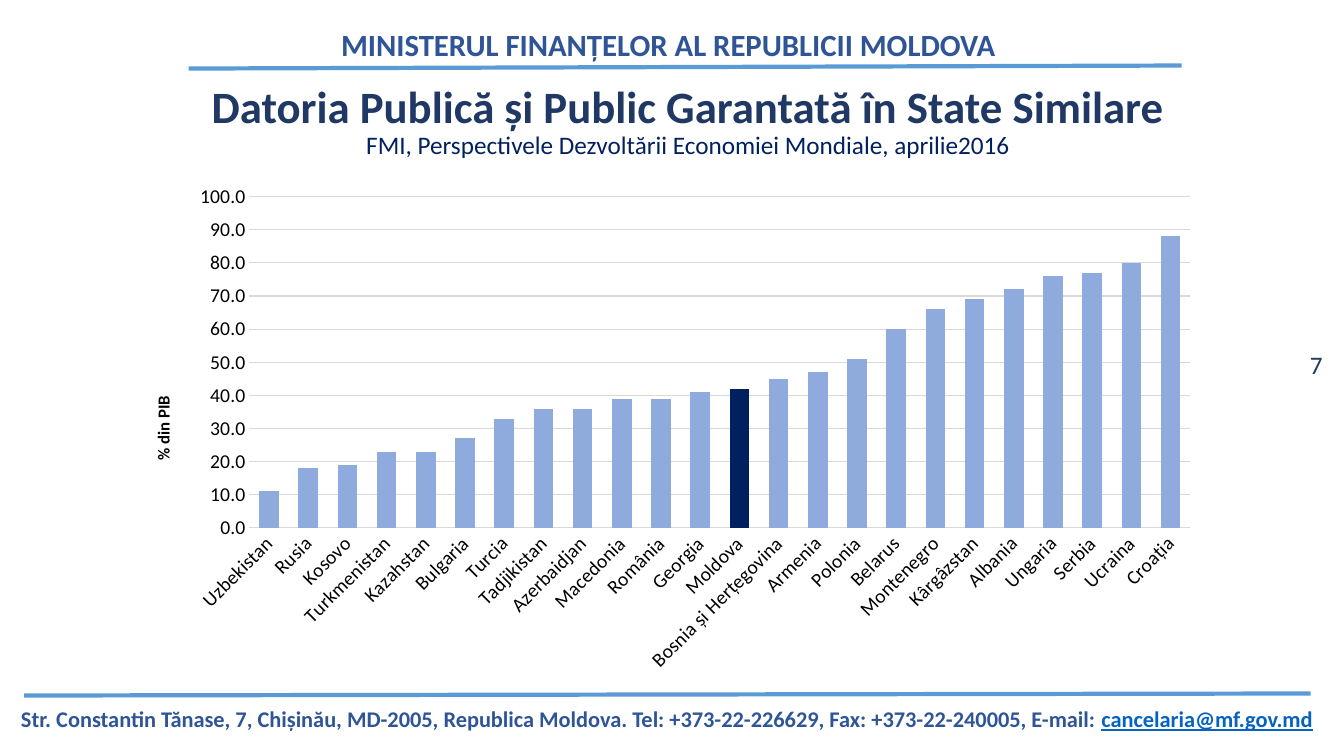
from lxml import etree
from pptx import Presentation
from pptx.chart.data import CategoryChartData
from pptx.dml.color import RGBColor
from pptx.enum.chart import XL_CHART_TYPE as ChartType, XL_TICK_MARK as TickMark
from pptx.enum.shapes import MSO_CONNECTOR as Connector
from pptx.enum.text import MSO_ANCHOR as Anchor, PP_ALIGN as Align
from pptx.oxml.ns import qn
from pptx.util import Inches, Pt

FONT = "Calibri"
NAVY, DARK_BLUE, MID_BLUE = "002060", "203864", "2F5597"
RULE_BLUE, BAR_BLUE, LINK_BLUE = "5B9BD5", "8FAADC", "0563C1"
GRID_GREY, BLACK = "D9D9D9", "000000"
HIGHLIGHTED = "Moldova"
DEBT = {
    "Uzbekistan": 11, "Rusia": 18, "Kosovo": 19, "Turkmenistan": 23,
    "Kazahstan": 23, "Bulgaria": 27, "Turcia": 33, "Tadjikistan": 36,
    "Azerbaidjan": 36, "Macedonia": 39, "România": 39, "Georgia": 41,
    "Moldova": 42, "Bosnia și Herțegovina": 45, "Armenia": 47, "Polonia": 51,
    "Belarus": 60, "Montenegro": 66, "Kârgâzstan": 69, "Albania": 72,
    "Ungaria": 76, "Serbia": 77, "Ucraina": 80, "Croația": 88,
}


def color(value):
    return RGBColor.from_string(value)


def style_font(font, size, font_color, bold=False):
    font.name, font.size, font.bold = FONT, Pt(size), bold
    font.color.rgb = color(font_color)


def add_run(paragraph, text, size, font_color, bold=False, underline=False):
    run = paragraph.add_run()
    run.text = text
    style_font(run.font, size, font_color, bold)
    if underline:
        run.font.underline = True


def place(shape, left, top, width, height):
    shape.left, shape.top = Inches(left), Inches(top)
    shape.width, shape.height = Inches(width), Inches(height)


def add_text(slide, box, spacing=1.0, anchor=Anchor.TOP):
    """Add a centred text box and return its first paragraph."""
    frame = slide.shapes.add_textbox(*map(Inches, box)).text_frame
    frame.word_wrap = True
    frame.vertical_anchor = anchor
    paragraph = frame.paragraphs[0]
    paragraph.alignment = Align.CENTER
    paragraph.line_spacing = spacing
    return paragraph


def add_rule(slide, *ends):
    rule = slide.shapes.add_connector(Connector.STRAIGHT, *map(Inches, ends))
    rule.line.color.rgb = color(RULE_BLUE)
    rule.line.width = Pt(3)
    etree.SubElement(rule._element.spPr, qn("a:effectLst"))


def fill_title(title):
    place(title, 1.53, 0.82, 10.59, 0.79)
    title.text_frame.vertical_anchor = Anchor.MIDDLE
    paragraph = title.text_frame.paragraphs[0]
    paragraph.alignment = Align.CENTER
    paragraph.line_spacing = 0.9
    add_run(paragraph, "Datoria Publică și Public Garantată în State Similare", 32, DARK_BLUE, True)
    paragraph.add_line_break()
    add_run(paragraph, "FMI, Perspectivele Dezvoltării Economiei Mondiale, aprilie2016", 18, NAVY)


def make_layout(parent, **settings):
    for old in parent.findall(qn("c:layout")):
        parent.remove(old)
    layout = etree.Element(qn("c:layout"))
    manual = etree.SubElement(layout, qn("c:manualLayout"))
    for name, value in settings.items():
        etree.SubElement(manual, qn(f"c:{name}")).set("val", str(value))
    return layout


def style_axis(axis):
    axis.major_tick_mark = axis.minor_tick_mark = TickMark.NONE
    style_font(axis.tick_labels.font, 14, BLACK)


def style_line(line):
    line.color.rgb = color(GRID_GREY)
    line.width = Pt(0.75)


def style_axes(chart):
    countries, percent = chart.category_axis, chart.value_axis
    style_axis(countries)
    style_line(countries.format.line)
    body = countries._element.find(qn("c:txPr")).find(qn("a:bodyPr"))
    body.set("rot", "-2700000")
    body.set("vert", "horz")

    style_axis(percent)
    percent.format.line.fill.background()
    percent.minimum_scale, percent.maximum_scale, percent.major_unit = 0, 100, 10
    percent.tick_labels.number_format = "0.0"
    percent.tick_labels.number_format_is_linked = False
    percent.has_major_gridlines = True
    style_line(percent.major_gridlines.format.line)
    axis_title = percent.axis_title
    add_run(axis_title.text_frame.paragraphs[0], "% din PIB", 12, BLACK, True)
    body = axis_title.text_frame._txBody.find(qn("a:bodyPr"))
    body.set("rot", "-5400000")
    body.set("vert", "horz")
    element = axis_title._element
    layout = make_layout(element, xMode="edge", yMode="edge", x=0.02, y=0.43)
    element.find(qn("c:tx")).addnext(layout)


def add_debt_chart(slide):
    data = CategoryChartData(number_format="0.0")
    data.categories = list(DEBT)
    data.add_series("Series 1", list(DEBT.values()))
    box = map(Inches, (1.26, 1.73, 10.75, 5.04))
    chart = slide.shapes.add_chart(ChartType.COLUMN_CLUSTERED, *box, data).chart
    chart.has_legend = chart.has_title = False
    style_font(chart.font, 10, BLACK)
    plot = chart.plots[0]
    plot.vary_by_categories = False
    plot.gap_width, plot.overlap = 100, -27
    series = plot.series[0]
    highlighted = series.points[list(DEBT).index(HIGHLIGHTED)]
    for item, fill in ((series, BAR_BLUE), (highlighted, NAVY)):
        item.format.fill.solid()
        item.format.fill.fore_color.rgb = color(fill)
    style_axes(chart)
    area = chart._chartSpace.chart.plotArea
    area.insert(0, make_layout(area, layoutTarget="inner", xMode="edge", yMode="edge",
                               x=0.113, y=0.044, w=0.868, h=0.652))


def main():
    presentation = Presentation()
    presentation.slide_width, presentation.slide_height = Inches(13.33), Inches(7.5)
    slide = presentation.slides.add_slide(presentation.slide_layouts[5])

    address = add_text(slide, (0, 6.91, 13.23, 0.39), 1.15)
    add_run(address, "Str. Constantin Tănase, 7, Chișinău, MD-2005, Republica Moldova. "
            "Tel: +373-22-226629, Fax: +373-22-240005, E-mail: ", 16, MID_BLUE, True)
    add_run(address, "cancelaria@mf.gov.md", 16, LINK_BLUE, True, True)
    ministry = add_text(slide, (1.78, 0.15, 9.7, 0.5), 1.15)
    add_run(ministry, "MINISTERUL FINANȚELOR AL REPUBLICII MOLDOVA", 22, MID_BLUE, True)
    add_rule(slide, 1.87, 0.68, 11.72, 0.65)
    add_rule(slide, 0.24, 6.9, 13, 6.88)
    number = add_text(slide, (12.8, 3.36, 0.51, 0.51), anchor=Anchor.MIDDLE)
    add_run(number, "7", 18, DARK_BLUE)

    fill_title(slide.shapes.title)
    add_debt_chart(slide)
    presentation.save("out.pptx")


if __name__ == "__main__":
    main()
